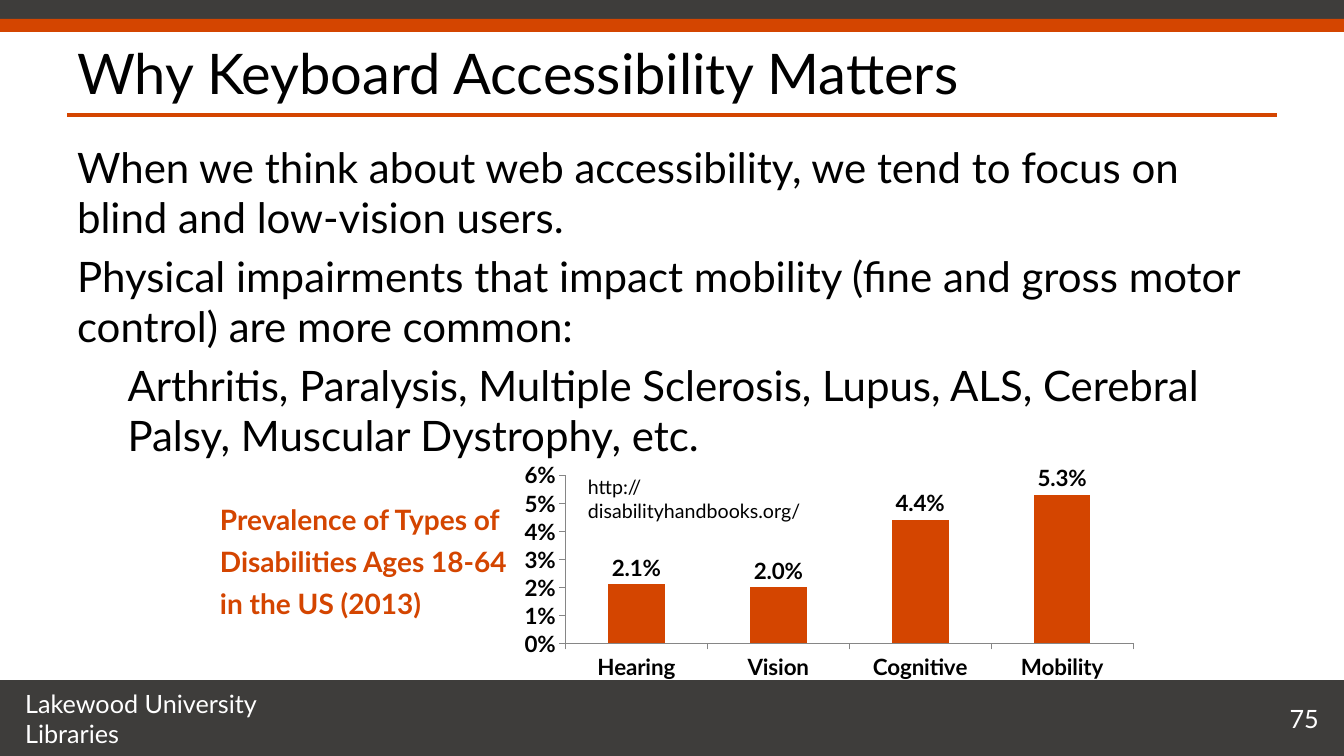
from dataclasses import dataclass

from lxml import etree
from pptx import Presentation
from pptx.chart.data import CategoryChartData
from pptx.dml.color import RGBColor
from pptx.enum.chart import XL_CHART_TYPE, XL_LABEL_POSITION, XL_TICK_MARK
from pptx.enum.shapes import MSO_CONNECTOR, MSO_SHAPE
from pptx.enum.text import MSO_ANCHOR, PP_ALIGN
from pptx.oxml.ns import qn
from pptx.util import Emu, Inches, Pt

RECT = MSO_SHAPE.RECTANGLE
STRAIGHT = MSO_CONNECTOR.STRAIGHT
COLUMNS = XL_CHART_TYPE.COLUMN_CLUSTERED
OUTSIDE = XL_TICK_MARK.OUTSIDE
OUTSIDE_END = XL_LABEL_POSITION.OUTSIDE_END
TOP, MIDDLE = MSO_ANCHOR.TOP, MSO_ANCHOR.MIDDLE
LEFT, RIGHT = PP_ALIGN.LEFT, PP_ALIGN.RIGHT

FONT = "Lato"
ORANGE, CHARCOAL, GREY = "D44500", "3E3D3B", "868686"
BLACK, WHITE = "000000", "FFFFFF"
GRID_COLUMNS = 160
INSETS = (0.1, 0.05, 0.1, 0.05)


@dataclass(frozen=True)
class Box:
    col: float
    row: float
    cols: float
    rows: float


@dataclass(frozen=True)
class Band:
    box: Box
    color: str


@dataclass(frozen=True)
class Label:
    box: Box
    lines: tuple[str, ...]
    size: int
    color: str = BLACK
    bold: bool = False
    anchor: MSO_ANCHOR = TOP
    align: PP_ALIGN = LEFT
    insets: tuple[float, ...] = INSETS
    space_before: float = 0
    line_spacing: float = 1.0
    margins: tuple[float, ...] = ()


BANDS = (
    Band(Box(0, 81, 160, 9), CHARCOAL),
    Band(Box(0, 0, 160, 2.4), CHARCOAL),
    Band(Box(0, 2.25, 160, 1.55), ORANGE),
)
TITLE_RULE = Box(8, 13.7, 144, 0)
CHART_BOX = Box(61.3, 54.4, 75.1, 27.1)
PLOT_SHARES = {"x": 0.08, "y": 0.08, "w": 0.9, "h": 0.74}
PREVALENCE = {"Hearing": 0.021, "Vision": 0.02, "Cognitive": 0.044, "Mobility": 0.053}

LABELS = (
    Label(Box(0, 81, 160, 9), ("Lakewood University \vLibraries",), 18, WHITE,
          anchor=MIDDLE, insets=(0.25, 0.05, 0.1, 0.05)),
    Label(Box(8, 3.6, 144, 10), ("Why Keyboard Accessibility Matters",), 40, anchor=MIDDLE),
    Label(Box(8, 15, 144, 66), (
        "When we think about web accessibility, we tend to focus on blind and low-vision users.",
        "Physical impairments that impact mobility (fine and gross motor control) are more common:",
        "Arthritis, Paralysis, Multiple Sclerosis, Lupus, ALS, Cerebral Palsy, Muscular Dystrophy, etc.",
    ), 30, insets=(0.1, 0.15, 0.1, 0.05), space_before=6, margins=(0, 0, 0.5)),
    Label(Box(148.2, 81, 8.8, 9), ("75",), 18, WHITE, anchor=MIDDLE, align=RIGHT,
          insets=(0, 0, 0, 0)),
    Label(Box(25, 58.2, 37.1, 16.3),
          ("Prevalence of Types of Disabilities Ages 18-64 in the US (2013)",),
          20, ORANGE, bold=True, line_spacing=1.25),
    Label(Box(68.8, 56, 35.6, 7), ("http://\vdisabilityhandbooks.org/",), 14),
)


def rgb(color: str) -> RGBColor:
    return RGBColor.from_string(color)


def place(box: Box, cell: float) -> list[Emu]:
    return [Emu(round(n * cell)) for n in (box.col, box.row, box.cols, box.rows)]


def add_band(s, band: Band, cell: float) -> None:
    sp = s.shapes.add_shape(RECT, *place(band.box, cell))
    sp.shadow.inherit = False
    sp.fill.solid()
    sp.fill.fore_color.rgb = rgb(band.color)
    sp.line.fill.background()


def add_rule(s, box: Box, cell: float) -> None:
    x, y, w, h = place(box, cell)
    line = s.shapes.add_connector(STRAIGHT, x, y, x + w, y + h)
    line.line.color.rgb = rgb(ORANGE)
    line.line.width = Pt(3)
    etree.SubElement(line._element.spPr, qn("a:effectLst"))


def add_label(s, label: Label, cell: float) -> None:
    tf = s.shapes.add_textbox(*place(label.box, cell)).text_frame
    tf.word_wrap = True
    tf.vertical_anchor = label.anchor
    tf.margin_left, tf.margin_top, tf.margin_right, tf.margin_bottom = map(Inches, label.insets)
    tf.text = "\n".join(label.lines)
    for p in tf.paragraphs:
        p.alignment = label.align
        p.space_before = Pt(label.space_before)
        p.line_spacing = label.line_spacing
        for r in p.runs:
            r.font.name = FONT
            r.font.size = Pt(label.size)
            r.font.bold = label.bold
            r.font.color.rgb = rgb(label.color)
    for p, margin in zip(tf.paragraphs, label.margins):
        p._p.get_or_add_pPr().set("marL", str(Inches(margin)))


def set_plot_layout(chart, shares: dict[str, float]) -> None:
    plot_area = chart._chartSpace.chart.plotArea
    for old in plot_area.findall(qn("c:layout")):
        plot_area.remove(old)
    layout = etree.Element(qn("c:layout"))
    plot_area.insert(0, layout)
    manual = etree.SubElement(layout, qn("c:manualLayout"))
    settings = {"layoutTarget": "inner", "xMode": "edge", "yMode": "edge", **shares}
    for tag, value in settings.items():
        etree.SubElement(manual, qn(f"c:{tag}")).set("val", str(value))


def add_prevalence_chart(s, cell: float) -> None:
    data = CategoryChartData()
    data.categories = list(PREVALENCE)
    data.add_series("Series 1", list(PREVALENCE.values()))
    chart = s.shapes.add_chart(COLUMNS, *place(CHART_BOX, cell), data).chart
    chart.has_legend = False
    chart.has_title = False
    chart.font.name = FONT
    chart.font.size = Pt(16)
    chart.font.bold = True
    chart.font.color.rgb = rgb(BLACK)
    for axis in (chart.category_axis, chart.value_axis):
        axis.has_major_gridlines = False
        axis.major_tick_mark = OUTSIDE
        axis.format.line.color.rgb = rgb(GREY)
    axis = chart.value_axis
    axis.minimum_scale, axis.maximum_scale, axis.major_unit = 0, 0.06, 0.01
    axis.tick_labels.number_format = "0%"
    axis.tick_labels.number_format_is_linked = False
    plot = chart.plots[0]
    plot.gap_width = 150
    plot.vary_by_categories = False
    plot.has_data_labels = True
    labels = plot.data_labels
    labels.show_value = True
    labels.position = OUTSIDE_END
    labels.number_format = "0.0%"
    labels.number_format_is_linked = False
    fill = plot.series[0].format.fill
    fill.solid()
    fill.fore_color.rgb = rgb(ORANGE)
    set_plot_layout(chart, PLOT_SHARES)


def main() -> None:
    prs = Presentation()
    prs.slide_width, prs.slide_height = Inches(13.33), Inches(7.5)
    cell = prs.slide_width / GRID_COLUMNS
    s = prs.slides.add_slide(prs.slide_layouts[6])
    for band in BANDS:
        add_band(s, band, cell)
    add_rule(s, TITLE_RULE, cell)
    add_prevalence_chart(s, cell)
    for label in LABELS:
        add_label(s, label, cell)
    prs.save("out.pptx")


if __name__ == "__main__":
    main()
